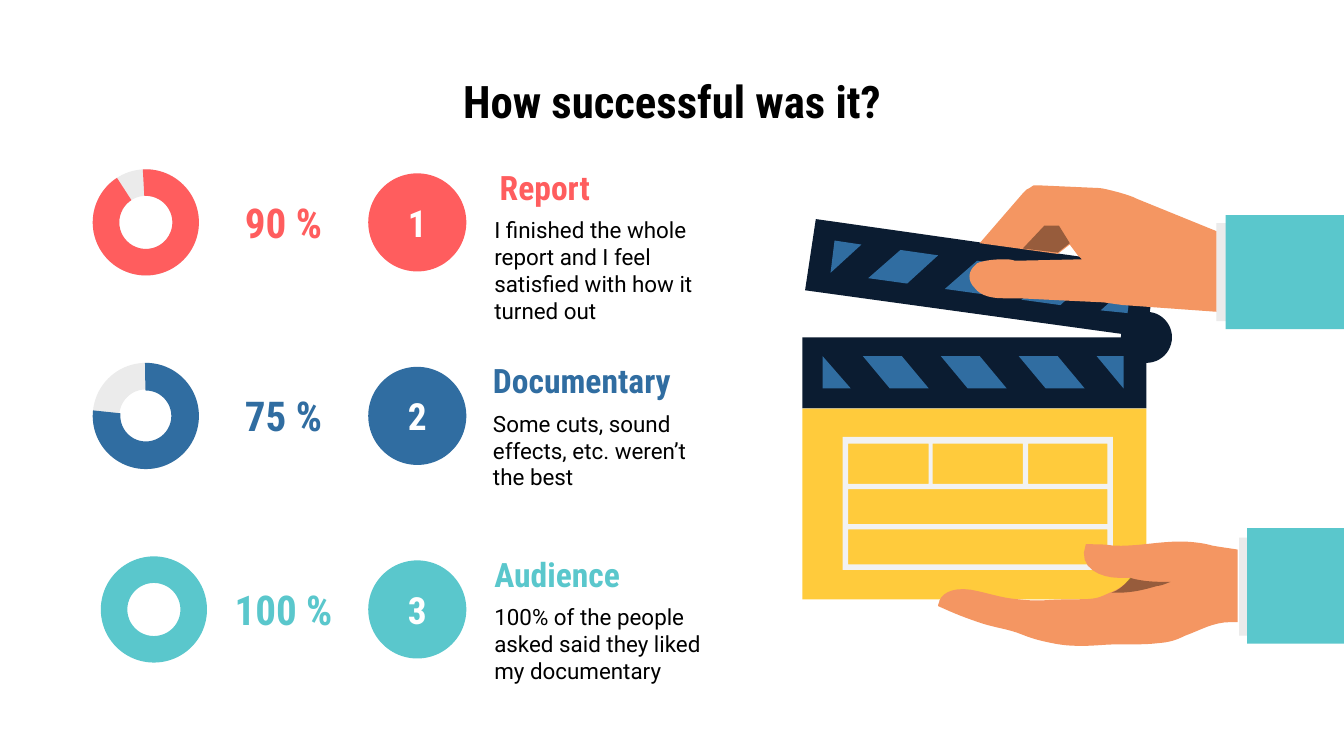
from lxml import etree
from pptx import Presentation
from pptx import util as u
from pptx.dml.color import RGBColor
from pptx.enum import shapes, text
from pptx.oxml.ns import qn

PX = 9144
INSET = 10
COLORS = {"red": "FF5D5E", "blue": "306DA1", "teal": "5AC7CC", "navy": "0B1C31",
          "yellow": "FFCB3C", "skin": "F49662", "grey": "EBEBEB", "frame": "F2F2F2",
          "white": "FFFFFF", "black": "000000"}
SHAPE = shapes.MSO_SHAPE
CENTER, LEFT = text.PP_ALIGN.CENTER, text.PP_ALIGN.LEFT
MIDDLE, TOP = text.MSO_ANCHOR.MIDDLE, text.MSO_ANCHOR.TOP
ROW_PITCH = 144
ROWS = [
    ("red", "90 %", "Report", "I finished the whole report and I feel satisfied with how it turned out",
     0, 293, 289, (160.05, 142.24, 0.25)),
    ("blue", "75 %", "Documentary", "Some cuts, sound effects, etc. weren’t the best",
     0, 288, 288, (161.46, 111.61, 0.26)),
    ("teal", "100 %", "Audience", "100% of the people asked said they liked my documentary",
     6, 289, 289, None),
]
UPPER_HAND = [
    (185, 34), (185, 94), (115, 89), (101, 87), (79, 86), (38, 84), (27, 84),
    (20, 84, 10, 83, 5, 76), (0, 71, 0, 64, 6, 59), (7, 58), (11, 56, 19, 55, 27, 55),
    (30, 55, 32, 55, 35, 56), (39, 56), (85, 55), (82, 52), (76, 44), (67, 51), (9, 43),
    (41, 6), (44, 3), (46, 2), (49, 0), (54, 0), (98, 2), (101, 2, 121, 7, 126, 10)]
UPPER_SHADE = [(68, 30), (76, 43), (67, 50), (41, 47), (57, 30)]
LOWER_HAND = [
    (0, 58), (13, 64, 21, 67, 33, 71), (42, 74, 52, 75, 62, 79), (72, 83, 77, 84, 87, 86),
    (97, 88, 109, 88, 122, 87), (132, 86, 150, 87, 160, 86), (170, 85, 174, 85, 184, 80),
    (195, 76, 205, 70, 217, 70), (223, 70), (223, 16), (217, 15, 209, 14, 204, 13),
    (197, 11, 188, 10, 180, 10), (163, 10, 147, 14, 130, 13), (124, 12, 117, 12, 110, 12),
    (103, 30, 122, 37, 134, 37), (144, 37), (139, 42, 134, 46, 128, 48),
    (119, 52, 119, 53, 101, 53), (77, 53, 78, 55, 60, 53), (48, 52, 43, 50, 30, 47),
    (14, 43, 4, 47, 1, 54), (1, 55, 0, 57, 0, 58)]
LOWER_SHADE = [
    (143, 37), (153, 40, 163, 40, 173, 40), (170, 41, 166, 43, 163, 43),
    (153, 46, 144, 48, 135, 48), (129, 48), (135, 46, 139, 42, 143, 37)]


def rgb(name):
    """Return the named colour."""
    return RGBColor.from_string(COLORS[name])


def paint(sp, color):
    """Give a shape a flat fill with no line or shadow."""
    sp.shadow.inherit = False
    sp.fill.solid()
    sp.fill.fore_color.rgb = rgb(color)
    sp.line.fill.background()
    return sp


def preset(s, kind, box, color, adjustments=()):
    """Add a flat preset shape in a px box."""
    sp = paint(s.shapes.add_shape(kind, *(v * PX for v in box)), color)
    for i, value in enumerate(adjustments):
        sp.adjustments[i] = value
    return sp


def flatten(outline, steps=8):
    """Turn points and cubic curves into a list of points."""
    points = []
    for part in outline:
        if len(part) == 2:
            points.append(part)
            continue
        x0, y0 = points[-1]
        x1, y1, x2, y2, x3, y3 = part
        for i in range(1, steps + 1):
            t = i / steps
            a, b, c, d = (1 - t) ** 3, 3 * t * (1 - t) ** 2, 3 * t * t * (1 - t), t ** 3
            points.append((a * x0 + b * x1 + c * x2 + d * x3, a * y0 + b * y1 + c * y2 + d * y3))
    return points


def outline_shape(s, x, y, color, *outlines):
    """Add one flat freeform made of closed outlines relative to x, y."""
    builder = None
    for outline in outlines:
        points = [((x + px) * PX, (y + py) * PX) for px, py in flatten(outline)]
        if builder is None:
            builder = s.shapes.build_freeform(*points[0], scale=1.0)
        else:
            builder.move_to(*points[0])
        builder.add_line_segments(points[1:], close=True)
    return paint(builder.convert_to_shape(), color)


def write(sp, words, font, size, color, bold=True, align=CENTER, anchor=MIDDLE):
    """Set and format the text of a shape."""
    tf = sp.text_frame
    tf.text = words
    tf.word_wrap = True
    tf.auto_size = text.MSO_AUTO_SIZE.NONE
    tf.vertical_anchor = anchor
    tf.margin_left = tf.margin_right = tf.margin_top = tf.margin_bottom = INSET * PX
    p = tf.paragraphs[0]
    p.alignment = align
    f = p.runs[0].font
    f.name, f.size, f.bold = font, u.Pt(size), bold
    f.color.rgb = rgb(color)


def label(s, box, *args, **kwargs):
    """Add a text box in a px box."""
    write(s.shapes.add_textbox(*(v * PX for v in box)), *args, **kwargs)


def add_title(s, x, y, w, h):
    """Place the title placeholder."""
    sp = s.shapes.title
    sp.left, sp.top, sp.width, sp.height = (v * PX for v in (x, y, w, h))
    write(sp, "How successful was it?", "Roboto Condensed", 24, "black", anchor=TOP)


def add_row(s, x, y, number, row):
    """Add a ring, percentage, numbered disc and description."""
    color, percent, heading, body, ring_dx, heading_dx, body_dx, arc = row
    ring = (x + ring_dx, y, 79, 79)
    preset(s, SHAPE.DONUT, ring, "grey" if arc else color, [0.25])
    if arc:
        preset(s, SHAPE.BLOCK_ARC, ring, color, arc)
    label(s, (x + 94, y + 21, 96, 36), percent, "Roboto Condensed", 22, color)
    disc = preset(s, SHAPE.OVAL, (x + 205, y + 3, 73, 73), color)
    write(disc, str(number), "Roboto Condensed", 20, "white")
    label(s, (x + heading_dx, y - 6, 180, 38), heading, "Roboto Condensed", 18, color, align=LEFT)
    label(s, (x + body_dx, y + 25, 180, 60), body, "Roboto", 12, "black",
          bold=False, align=LEFT, anchor=TOP)


def corners(left, top, right, bottom):
    """Return the corners of a rectangle."""
    return [(left, top), (right, top), (right, bottom), (left, bottom)]


def add_clapperboard(s, x, y):
    """Add the clapperboard with its striped bars and slate."""
    preset(s, SHAPE.RECTANGLE, (x, y + 88, 256, 53), "navy")
    outline_shape(s, x, y, "navy", [(10, 0), (263, 36), (256, 88), (2, 53)])
    for i in range(3):
        outline_shape(s, x + 45 + 58 * i, y + 102, "blue", [(29, 0), (49, 24), (20, 24), (0, 0)])
        outline_shape(s, x + 49 + 57 * i, y + 23 + 8 * i, "blue",
                      [(24, 0), (52, 4), (29, 25), (0, 21)])
    for end in ([(15, 102), (36, 126), (15, 126)], [(239, 102), (239, 126), (219, 102)],
                [(24, 16), (44, 19), (21, 40)], [(245, 47), (242, 70), (222, 68)]):
        outline_shape(s, x, y, "blue", end)
    preset(s, SHAPE.OVAL, (x + 237, y + 69, 38, 38), "navy")
    preset(s, SHAPE.RECTANGLE, (x, y + 141, 256, 142), "yellow")
    cells = [(34, 167, 94, 197), (97, 167, 164, 197), (168, 167, 227, 197),
             (34, 201, 227, 227), (34, 231, 227, 257)]
    outline_shape(s, x, y, "frame", corners(30, 162, 231, 261), *(corners(*c) for c in cells))


def add_arm(s, x, y, cuff, sleeve, hand, shade):
    """Add a cuff, a sleeve, a hand and its translucent shade."""
    for (dx, dy, w, h), color in ((cuff, "grey"), (sleeve, "teal")):
        preset(s, SHAPE.RECTANGLE, (x + dx, y + dy, w, h), color)
    outline_shape(s, x, y, "skin", hand)
    sp = outline_shape(s, x, y, "black", shade)
    fill_color = sp.element.spPr.find(qn("a:solidFill"))[0]
    etree.SubElement(fill_color, qn("a:alpha")).set("val", "38000")


def main():
    """Build and save the slide."""
    prs = Presentation()
    prs.slide_width = 1000 * PX
    prs.slide_height = prs.slide_width * 9 // 16
    s = prs.slides.add_slide(prs.slide_layouts[5])
    add_title(s, 56, 45, 888, 63)
    for i, row in enumerate(ROWS):
        add_row(s, 69, 126 + ROW_PITCH * i, i + 1, row)
    add_clapperboard(s, 597, 163)
    add_arm(s, 698, 393, (224, 7, 39, 73), (230, 0, 72, 86), LOWER_HAND, LOWER_SHADE)
    add_arm(s, 720, 138, (185, 28, 40, 73), (192, 22, 88, 85), UPPER_HAND, UPPER_SHADE)
    prs.save("out.pptx")


if __name__ == "__main__":
    main()
